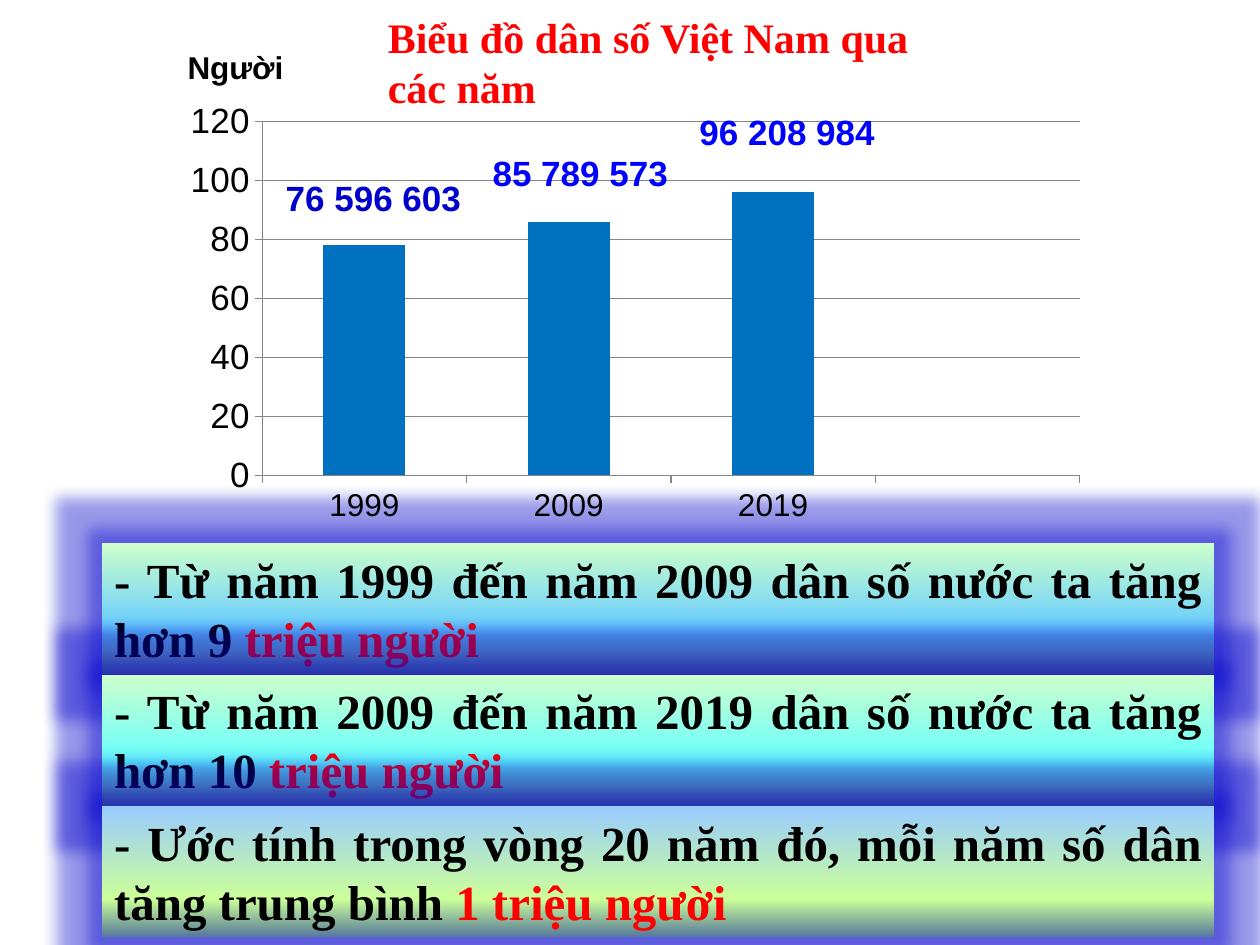
from copy import deepcopy

from lxml.etree import SubElement
from pptx import Presentation
from pptx.chart.data import CategoryChartData
from pptx.dml.color import RGBColor
from pptx.enum.chart import XL_CHART_TYPE, XL_TICK_MARK
from pptx.enum.shapes import MSO_SHAPE
from pptx.enum.text import MSO_ANCHOR, PP_ALIGN
from pptx.oxml import parse_xml
from pptx.oxml.ns import nsdecls, qn
from pptx.util import Cm, Pt

# Lead text, highlighted text, gradient stops from bottom to top
STATEMENTS = [
    ("- Từ năm 1999 đến năm 2009 dân số nước ta tăng hơn 9 ", "triệu người",
     [(0, "779977"), (0.33, "66CCFF"), (1, "CCFFCC")]),
    ("- Từ năm 2009 đến năm 2019 dân số nước ta tăng hơn 10 ", "triệu người",
     [(0, "779977"), (0.32, "66FFFF"), (1, "CCFFCC")]),
    ("- Ước tính trong vòng 20 năm đó, mỗi năm số dân tăng trung bình ", "1 triệu người",
     [(0, "56799C"), (0.29, "CCFF99"), (1, "99CCFF")]),
]
# Exact population, height above the column, colour
POPULATIONS = [("76 596 603", 3.02, "0000CC"), ("85 789 573", 2.51, "0000FF"),
               ("96 208 984", 1.7, "0000FF")]


def color(value):
    return RGBColor.from_string(value)


def style_font(font, name, size, value, bold=False):
    font.name, font.size, font.bold = name, Pt(size), bold
    font.color.rgb = color(value)


def add_label(page, left, top, width, height, text, name, size, value):
    box = page.shapes.add_textbox(Cm(left), Cm(top), Cm(width), Cm(height))
    box.text_frame.word_wrap = True
    para = box.text_frame.paragraphs[0]
    para.text = text
    style_font(para.font, name, size, value, True)


def fill_gradient(box, stops):
    box.fill.gradient()
    box.fill.gradient_angle = 90
    first = box.element.spPr.find(".//" + qn("a:gs"))
    first.addnext(deepcopy(first))
    for stop, (position, value) in zip(box.fill.gradient_stops, stops):
        stop.position = position
        stop.color.rgb = color(value)


def add_glow(box, radius, value, alpha):
    box.shadow.inherit = False
    effects = box.element.spPr.find(qn("a:effectLst"))
    glow = SubElement(effects, qn("a:glow"), rad=str(Pt(radius)))
    tint = SubElement(glow, qn("a:srgbClr"), val=value)
    SubElement(tint, qn("a:alpha"), val=str(alpha * 1000))


def add_statements(page, left, top, width, height, gap):
    for index, (lead, highlight, stops) in enumerate(STATEMENTS):
        box = page.shapes.add_shape(MSO_SHAPE.RECTANGLE, Cm(left),
                                    Cm(top + index * (height + gap)), Cm(width), Cm(height))
        fill_gradient(box, stops)
        box.line.fill.background()
        add_glow(box, 18, "0000CC", 40)
        box.text_frame.word_wrap = True
        box.text_frame.vertical_anchor = MSO_ANCHOR.TOP
        para = box.text_frame.paragraphs[0]
        para.alignment = PP_ALIGN.JUSTIFY
        style_font(para.font, "Times New Roman", 28, "000000", True)
        para.add_run().text = lead
        span = para.add_run()
        span.text = highlight
        span.font.color.rgb = color("FF0000")


def set_layout(parent, index, **settings):
    """Place a chart part by fractions of the chart area."""
    old = parent.find(qn("c:layout"))
    if old is not None:
        parent.remove(old)
    layout = parse_xml(f"<c:layout {nsdecls('c')}/>")
    manual = SubElement(layout, qn("c:manualLayout"))
    for tag, value in settings.items():
        SubElement(manual, qn("c:" + tag), val=str(value))
    parent.insert(index, layout)


def style_axis(axis, size):
    style_font(axis.tick_labels.font, "Arial", size, "000000")
    axis.major_tick_mark = XL_TICK_MARK.OUTSIDE
    axis.format.line.color.rgb = color("868686")


def add_population_chart(page, left, top, width, height):
    data = CategoryChartData()
    data.categories = ["1999", "2009", "2019", ""]
    data.add_series("Series 1", [78, 86, 96, None])
    chart = page.shapes.add_chart(XL_CHART_TYPE.COLUMN_CLUSTERED, Cm(left), Cm(top),
                                  Cm(width), Cm(height), data).chart
    style_font(chart.font, "Arial", 10, "000000")
    chart.has_legend = False

    # Columns
    plot = chart.plots[0]
    plot.gap_width = 150
    plot.vary_by_categories = False
    columns = plot.series[0].format.fill
    columns.solid()
    columns.fore_color.rgb = color("0070C0")

    # Axes
    style_axis(chart.category_axis, 18)
    values = chart.value_axis
    style_axis(values, 20)
    values.minimum_scale, values.maximum_scale, values.major_unit = 0, 120, 20
    values.has_major_gridlines = True
    values.major_gridlines.format.line.color.rgb = color("868686")

    # Unit caption at the top left
    chart.has_title = True
    caption = chart.chart_title.text_frame.paragraphs[0]
    caption.text = "Người "
    style_font(caption.font, "Arial", 18, "000000", True)
    set_layout(chart.chart_title.element, 1, xMode="edge", yMode="edge", x=0.01, y=0.04)

    # Plot area, and a clear background
    area = chart.element.find(".//" + qn("c:plotArea"))
    set_layout(area, 0, layoutTarget="inner", xMode="edge", yMode="edge",
               x=0.097, y=0.197, w=0.885, h=0.69)
    chart.element.find(qn("c:chart")).addnext(
        parse_xml(f"<c:spPr {nsdecls('c', 'a')}><a:noFill/><a:ln><a:noFill/></a:ln></c:spPr>"))

    # Exact figures over the columns, then the heading
    for index, (text, offset, value) in enumerate(POPULATIONS):
        add_label(page, left + 2.03 + index * 4.17, top + offset, 5, 1.1,
                  text, "Arial", 20, value)
    add_label(page, left + 4.09, top - 0.31, 11.68, 1.27,
              "Biểu đồ dân số Việt Nam qua các năm", "Times New Roman", 24, "FF0000")


def main():
    deck = Presentation()
    deck.slide_width, deck.slide_height = Cm(25.4), Cm(19.05)
    page = deck.slides.add_slide(deck.slide_layouts[6])
    add_statements(page, 2.05, 10.95, 22.43, 2.64, 0.01)
    add_population_chart(page, 3.48, 0.41, 18.62, 10.34)
    deck.save("out.pptx")


if __name__ == "__main__":
    main()
